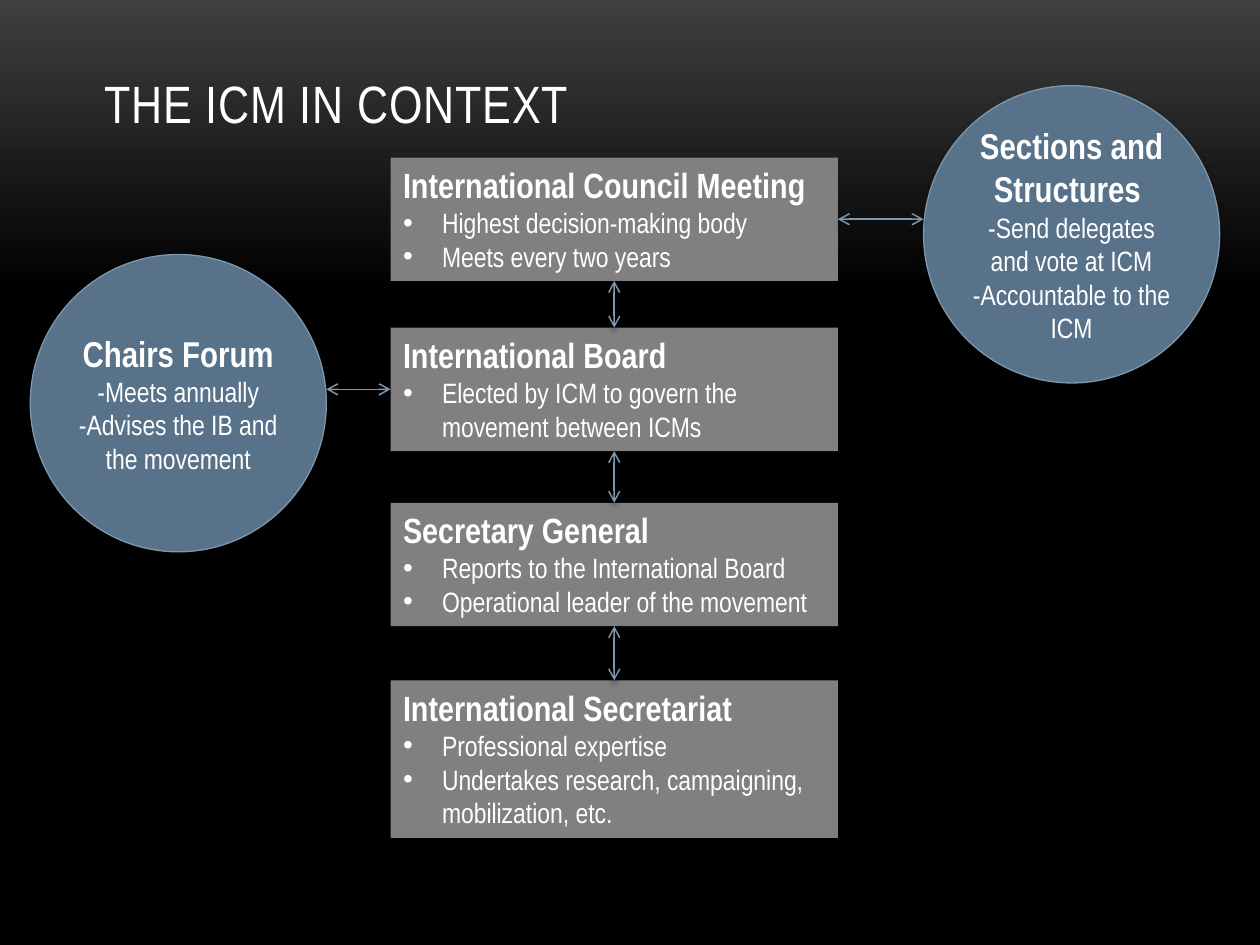
from copy import deepcopy

from lxml.etree import SubElement
from pptx import Presentation
from pptx.dml.color import RGBColor
from pptx.enum.shapes import MSO_CONNECTOR as Connector, MSO_SHAPE as Shape
from pptx.enum.text import MSO_ANCHOR as Anchor, PP_ALIGN as Align
from pptx.oxml.ns import qn
from pptx.util import Inches, Pt

FONT = "Arial Narrow"
WHITE = RGBColor(0xFF, 0xFF, 0xFF)
BLACK = RGBColor(0x00, 0x00, 0x00)
CHARCOAL = RGBColor(0x3F, 0x3F, 0x3F)
GRAY = RGBColor(0x80, 0x80, 0x80)
BLUE = RGBColor(0x57, 0x72, 0x89)
LIGHT_BLUE = RGBColor(0x7E, 0x97, 0xAD)

# Content
TITLE = "THE ICM IN CONTEXT"
BODIES = [  # top, height, heading, points
    (1.25, 0.98, "International Council Meeting",
     ["Highest decision-making body", "Meets every two years"]),
    (2.6, 0.98, "International Board",
     ["Elected by ICM to govern the movement between ICMs"]),
    (3.99, 0.98, "Secretary General",
     ["Reports to the International Board", "Operational leader of the movement"]),
    (5.4, 1.25, "International Secretariat",
     ["Professional expertise", "Undertakes research, campaigning, mobilization, etc."]),
]
GROUPS = [  # left, top, heading, points, linked body, side of body, edge facing it
    (7.33, 0.68, "Sections and Structures ",
     ["-Send delegates and vote at ICM", "-Accountable to the ICM"], 0, 3, 7.33),
    (0.24, 2.02, "Chairs Forum",
     ["-Meets annually", "-Advises the IB and the movement"], 1, 1, 2.59),
]
BODY_LEFT, BODY_WIDTH = 3.1, 3.55
CIRCLE_WIDTH, CIRCLE_HEIGHT = 2.35, 2.36


def style(para, size, bold=False, align=Align.LEFT):
    para.alignment = align
    para.font.name = FONT
    para.font.size = Pt(size)
    para.font.bold = bold
    para.font.color.rgb = WHITE


def add_bullet(para):
    properties = para._p.get_or_add_pPr()
    properties.set("marL", str(Inches(0.31)))
    properties.set("indent", str(-Inches(0.31)))
    bullet_font = SubElement(properties, qn("a:buFont"), typeface="Arial")
    bullet_font.addnext(properties.makeelement(qn("a:buChar"), {"char": "•"}))
    # Paragraph font defaults come after the bullet
    defaults = properties.find(qn("a:defRPr"))
    if defaults is not None:
        properties.append(defaults)


def write(frame, heading, points, heading_size, align, bulleted):
    frame.word_wrap = True
    frame.text = "\n".join([heading, *points])
    first, *rest = frame.paragraphs
    style(first, heading_size, True, align)
    for para in rest:
        style(para, 16, False, align)
        if bulleted:
            add_bullet(para)


def add_shadow(effects, blur, distance):
    shadow = SubElement(effects, qn("a:outerShdw"), blurRad=str(Pt(blur)),
                        dist=str(Pt(distance)), dir="5400000", rotWithShape="0")
    color = SubElement(shadow, qn("a:srgbClr"), val=str(BLACK))
    SubElement(color, qn("a:alpha"), val="40000")


def add_shape(page, kind, left, top, width, height, fill):
    shape = page.shapes.add_shape(
        kind, Inches(left), Inches(top), Inches(width), Inches(height))
    shape.shadow.inherit = False
    shape.fill.solid()
    shape.fill.fore_color.rgb = fill
    return shape


def add_arrow(page, start, side, end_x=0, end_y=0):
    arrow = page.shapes.add_connector(Connector.STRAIGHT, 0, 0, end_x, end_y)
    arrow.begin_connect(start, side)
    arrow.line.color.rgb = LIGHT_BLUE
    arrow.line.width = Pt(0.85)
    for end in ("a:headEnd", "a:tailEnd"):
        SubElement(arrow.line._get_or_add_ln(), qn(end), type="arrow")
    add_shadow(SubElement(arrow._element.spPr, qn("a:effectLst")), 3, 2)
    return arrow


deck = Presentation()
deck.slide_width, deck.slide_height = Inches(10), Inches(7.5)
page = deck.slides.add_slide(deck.slide_layouts[6])

# Background fades to black in the top third
fill = page.background.fill
fill.gradient()
fill.gradient_angle = 270
for stop, color, position in zip(fill.gradient_stops, (CHARCOAL, BLACK), (0, 0.31)):
    stop.color.rgb = color
    stop.position = position
stops = page._element.find(".//" + qn("a:gsLst"))
stops.append(deepcopy(stops[-1]))
stops[-1].set("pos", "100000")

# Title
title = page.shapes.add_textbox(Inches(0.73), Inches(0.31), Inches(8.67), Inches(0.8))
title.text_frame.word_wrap = True
title.text_frame.vertical_anchor = Anchor.BOTTOM
title.text_frame.text = TITLE
heading_para = title.text_frame.paragraphs[0]
style(heading_para, 30)
heading_para.runs[0].font._element.set("spc", "50")

# Governing bodies, top to bottom
boxes = []
for top, height, heading, points in BODIES:
    box = add_shape(page, Shape.RECTANGLE, BODY_LEFT, top, BODY_WIDTH, height, GRAY)
    box.line.fill.background()
    box.text_frame.vertical_anchor = Anchor.TOP
    write(box.text_frame, heading, points, 20, Align.LEFT, True)
    boxes.append(box)
for upper, lower in zip(boxes, boxes[1:]):
    add_arrow(page, upper, 2).end_connect(lower, 0)

# Groups beside the bodies
for left, top, heading, points, body, side, edge in GROUPS:
    circle = add_shape(page, Shape.OVAL, left, top, CIRCLE_WIDTH, CIRCLE_HEIGHT, BLUE)
    circle.line.color.rgb = LIGHT_BLUE
    circle.line.width = Pt(0.75)
    add_shadow(circle._element.spPr.find(qn("a:effectLst")), 4, 3.4)
    frame = circle.text_frame
    frame.margin_left = frame.margin_right = frame.margin_top = frame.margin_bottom = 0
    frame.vertical_anchor = Anchor.MIDDLE
    write(frame, heading, points, 20.5, Align.CENTER, False)
    box = boxes[body]
    add_arrow(page, box, side, Inches(edge), box.top + box.height // 2)

deck.save("out.pptx")
